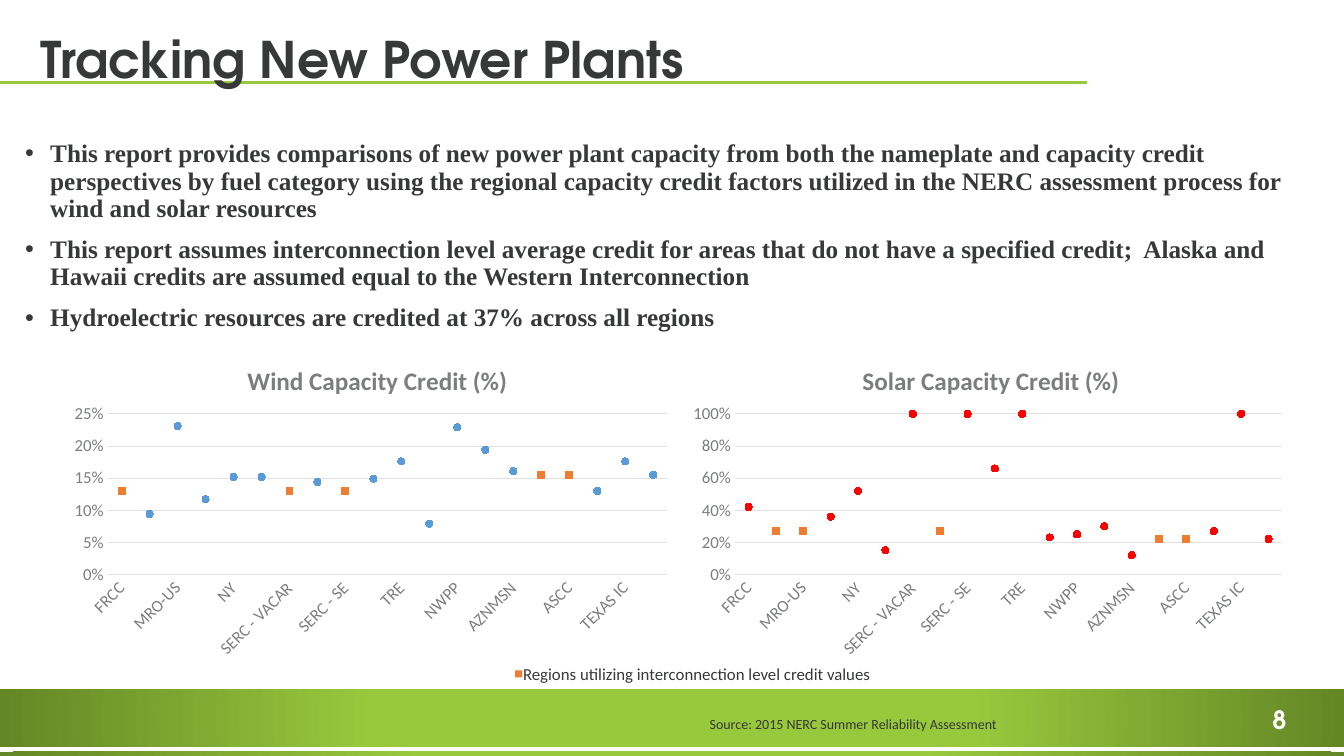
from lxml import etree
from pptx import Presentation
from pptx import util as u
from pptx.chart.data import CategoryChartData
from pptx.dml.color import RGBColor
from pptx.enum import chart as ch, shapes, text
from pptx.oxml import parse_xml
from pptx.oxml.ns import nsdecls, qn

Inches, Pt = u.Inches, u.Pt
COLORS = {"green": "98C93D", "dark_green": "648725", "ink": "373838", "gray": "7C7E7E",
          "grid": "E1E1E1", "blue": "5B9BD5", "red": "FF0000", "orange": "ED7D31",
          "white": "FFFFFF"}
BODY, HEAD, SERIF = "Calibri", "TeX Gyre Adventor", "Times New Roman"

BULLETS = [
    "This report provides comparisons of new power plant capacity from both the nameplate and "
    "capacity credit perspectives by fuel category using the regional capacity credit factors "
    "utilized in the NERC assessment process for wind and solar resources",
    "This report assumes interconnection level average credit for areas that do not have a "
    "specified credit;  Alaska and Hawaii credits are assumed equal to the Western "
    "Interconnection",
    "Hydroelectric resources are credited at 37% across all regions",
]
REGIONS = ["FRCC", "MISO", "MRO-US", "NE", "NY", "PJM", "SERC - VACAR", "SERC - Central",
           "SERC - SE", "SPP", "TRE", "CAMX", "NWPP", "RMPA", "AZNMSN", "HI", "ASCC",
           "EASTERN IC", "TEXAS IC", "WESTERN IC"]
WIND = [None, 0.094, 0.231, 0.117, 0.152, 0.152, None, 0.144, None, 0.149, 0.176, 0.079,
        0.229, 0.194, 0.161, None, None, 0.13, 0.176, 0.155]
WIND_DEFAULTS = {"FRCC": 0.13, "SERC - VACAR": 0.13, "SERC - SE": 0.13,
                 "HI": 0.155, "ASCC": 0.155}
SOLAR = [0.42, None, None, 0.36, 0.52, 0.15, 1, None, 1, 0.66, 1, 0.23, 0.25, 0.3, 0.12,
         None, None, 0.27, 1, 0.22]
SOLAR_DEFAULTS = {"MISO": 0.27, "MRO-US": 0.27, "SERC - Central": 0.27,
                  "HI": 0.22, "ASCC": 0.22}


def rgb(name):
    return RGBColor.from_string(COLORS[name])


def set_font(font, size, color="ink", name=BODY, bold=False):
    font.size, font.name, font.bold = Pt(size), name, bold
    font.color.rgb = rgb(color)


def add_bullet(p):
    pPr = p._p.get_or_add_pPr()
    pPr.set("marL", str(Inches(0.25)))
    pPr.set("indent", str(-Inches(0.25)))
    etree.SubElement(pPr, qn("a:buFont")).set("typeface", "Arial")
    etree.SubElement(pPr, qn("a:buChar")).set("char", "•")


def add_text(slide, box, lines, size, color="ink", font=BODY, bold=False, wrap=False,
             anchor=text.MSO_ANCHOR.TOP, spacing=None, before=0, bullets=False):
    tf = slide.shapes.add_textbox(*map(Inches, box)).text_frame
    tf.word_wrap, tf.vertical_anchor = wrap, anchor
    for i, line in enumerate(lines):
        p = tf.paragraphs[0] if i == 0 else tf.add_paragraph()
        if spacing:
            p.line_spacing = spacing
        if i and before:
            p.space_before = Pt(before)
        if bullets:
            add_bullet(p)
        r = p.add_run()
        r.text = line
        set_font(r.font, size, color, font, bold)


def add_rect(slide, box, color):
    sp = slide.shapes.add_shape(shapes.MSO_SHAPE.RECTANGLE, *map(Inches, box))
    sp.shadow.inherit = False
    sp.fill.solid()
    sp.fill.fore_color.rgb = rgb(color)
    sp.line.fill.background()
    return sp


def add_glow_band(slide, box, inner_stop):
    """Bar that darkens from its centre towards both ends."""
    sp = add_rect(slide, box, "green")
    solid = sp._element.spPr.find(qn("a:solidFill"))
    stops = "".join(f'<a:gs pos="{pos * 1000}"><a:srgbClr val="{COLORS[c]}"/></a:gs>'
                    for pos, c in ((inner_stop, "green"), (100, "dark_green")))
    solid.getparent().replace(solid, parse_xml(
        f'<a:gradFill {nsdecls("a")} rotWithShape="1"><a:gsLst>{stops}</a:gsLst>'
        '<a:path path="circle"><a:fillToRect l="50000" t="50000" r="50000" b="50000"/>'
        '</a:path></a:gradFill>'))


def add_rule(slide, x1, x2, y):
    line = slide.shapes.add_connector(shapes.MSO_CONNECTOR.STRAIGHT,
                                      Inches(x1), Inches(y), Inches(x2), Inches(y))
    line.line.color.rgb = rgb("green")
    line.line.width = Pt(1.75)
    etree.SubElement(line._element.spPr, qn("a:effectLst"))


def layout_xml(target="", **parts):
    """Manual layout whose parts are fractions of the chart."""
    modes = "".join(f'<c:{k}Mode val="edge"/>' for k in "xy")
    values = "".join(f'<c:{k} val="{v}"/>' for k, v in parts.items())
    return parse_xml(f'<c:layout {nsdecls("c")}><c:manualLayout>{target}{modes}{values}'
                     '</c:manualLayout></c:layout>')


def place(parent, layout, after=None):
    for old in parent.findall(qn("c:layout")):
        parent.remove(old)
    if after is None:
        parent.insert(0, layout)
    else:
        after.addnext(layout)


def style_axis(axis):
    axis.major_tick_mark = axis.minor_tick_mark = ch.XL_TICK_MARK.NONE
    set_font(axis.tick_labels.font, 12, "gray")


def add_credit_chart(slide, left, title, credits, defaults, color, top, step, plot_x, plot_w):
    data = CategoryChartData(number_format="0%")
    data.categories = REGIONS
    data.add_series("Series 1", credits)
    data.add_series("Series 2", [defaults.get(region) for region in REGIONS])
    chart = slide.shapes.add_chart(ch.XL_CHART_TYPE.LINE_MARKERS, Inches(left), Inches(3.36),
                                   Inches(6.1), Inches(3.25), data).chart
    set_font(chart.font, 10)
    chart.has_legend = False
    chart.plots[0].vary_by_categories = False

    tf = chart.chart_title.text_frame
    r = tf.paragraphs[0].add_run()
    r.text = title
    set_font(r.font, 18, "gray", bold=True)
    title_el = chart.element.xpath(".//c:title")[0]
    place(title_el, layout_xml(x=0.29, y=0.06), title_el.find(qn("c:tx")))
    place(chart.element.xpath(".//c:plotArea")[0],
          layout_xml('<c:layoutTarget val="inner"/>', x=plot_x, y=0.23, w=plot_w, h=0.49))

    markers = ((ch.XL_MARKER_STYLE.CIRCLE, color), (ch.XL_MARKER_STYLE.SQUARE, "orange"))
    for series, (style, fill) in zip(chart.series, markers):
        series.smooth = False
        series.format.line.fill.background()
        series.marker.style, series.marker.size = style, 5
        series.marker.format.fill.solid()
        series.marker.format.fill.fore_color.rgb = rgb(fill)
        series.marker.format.line.color.rgb = rgb(fill)

    regions, percent = chart.category_axis, chart.value_axis
    style_axis(regions)
    style_axis(percent)
    percent.minimum_scale, percent.maximum_scale, percent.major_unit = 0, top, step
    percent.tick_labels.number_format = "0%"
    percent.tick_labels.number_format_is_linked = False
    percent.format.line.fill.background()
    for line in (regions.format.line, percent.major_gridlines.format.line):
        line.color.rgb = rgb("grid")
        line.width = Pt(0.75)
    chart.element.xpath(".//c:catAx/c:txPr/a:bodyPr")[0].set("rot", "-2700000")
    chart.element.xpath(".//c:catAx/c:noMultiLvlLbl")[0].addprevious(
        parse_xml(f'<c:tickLblSkip {nsdecls("c")} val="2"/>'))


def main():
    prs = Presentation()
    prs.slide_width, prs.slide_height = Inches(13.33), Inches(7.5)
    s = prs.slides.add_slide(prs.slide_layouts[6])

    add_rule(s, 0, 10.78, 0.82)
    add_glow_band(s, (0, 6.84, 13.33, 0.57), 44)
    add_glow_band(s, (0, 7.46, 13.33, 0.05), 37)
    add_text(s, (12.52, 6.94, 0.48, 0.4), ["8"], 18, "white", HEAD, bold=True)

    add_text(s, (0.15, 1.35, 12.67, 4.39), BULLETS, 18, font=SERIF, bold=True, wrap=True,
             spacing=0.9, before=10, bullets=True)
    add_text(s, (0.3, 0.28, 12.67, 0.66), ["Tracking New Power Plants"], 36, font=HEAD,
             bold=True, wrap=True, anchor=text.MSO_ANCHOR.BOTTOM, spacing=0.9)

    add_credit_chart(s, 0.64, "Wind Capacity Credit (%)", WIND, WIND_DEFAULTS, "blue",
                     top=0.25, step=0.05, plot_x=0.07, plot_w=0.91)
    add_credit_chart(s, 6.74, "Solar Capacity Credit (%)", SOLAR, SOLAR_DEFAULTS, "red",
                     top=1, step=0.2, plot_x=0.09, plot_w=0.89)

    add_text(s, (5.09, 6.54, 3.77, 0.3),
             ["Regions utilizing interconnection level credit values"], 12)
    add_rect(s, (5.11, 6.65, 0.07, 0.07), "orange")
    add_text(s, (6.94, 7.05, 3.12, 0.27), ["Source: 2015 NERC Summer Reliability Assessment"], 10)
    prs.save("out.pptx")


if __name__ == "__main__":
    main()
